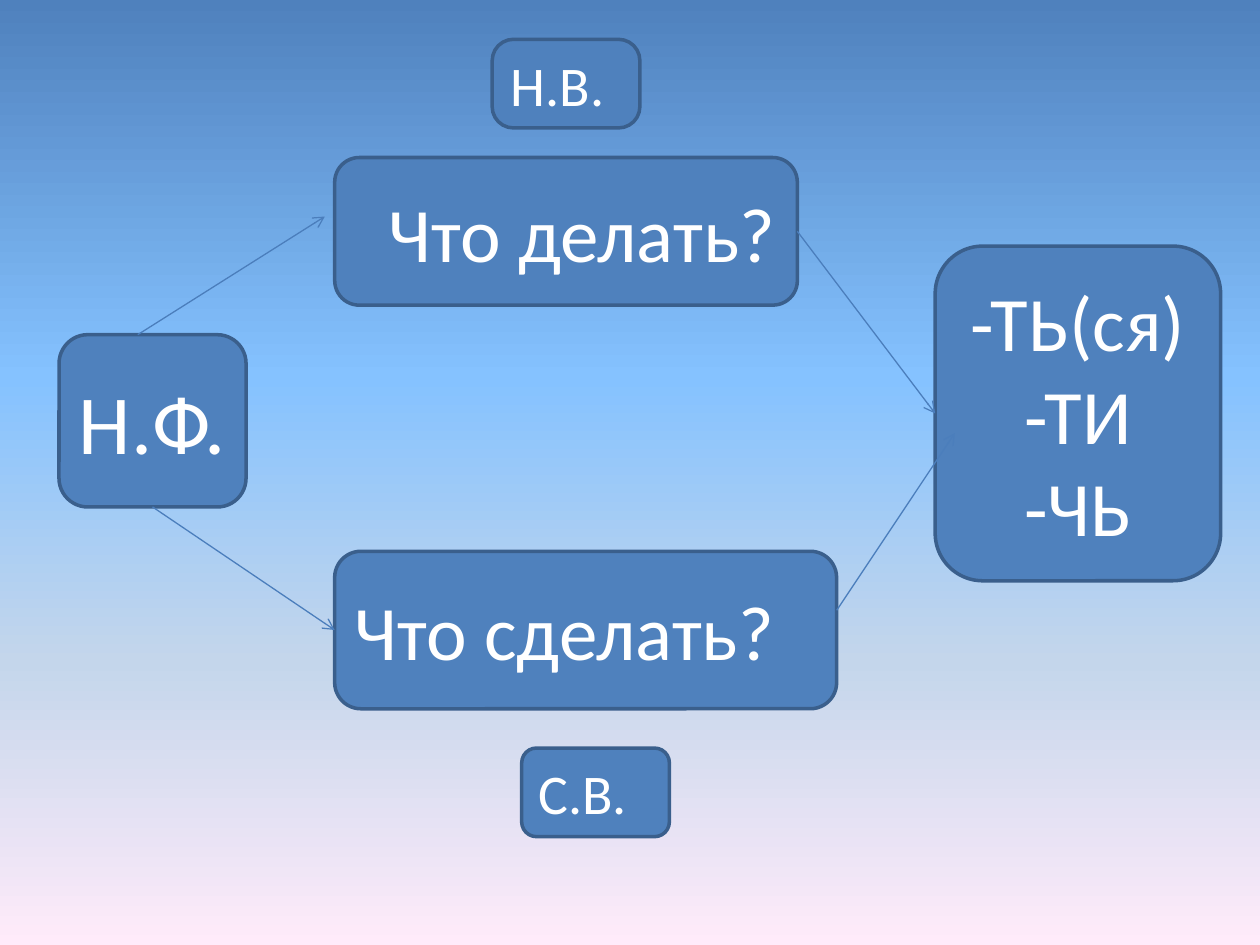
from lxml import etree
from pptx import Presentation
from pptx import util as u
from pptx.dml.color import RGBColor
from pptx.enum import shapes, text
from pptx.oxml import ns

HUES = {"fill": "4F81BD", "edge": "3A5F8C", "arrow": "4B7EBC", "text": "FFFFFF"}
SKY = {0: "4F81BD", 40: "85C2FF", 70: "C4D6EB", 100: "FFEBFA"}
COLS = 128
WIDE, HIGH = u.Inches(10), u.Inches(7.5)
FLOW = shapes.MSO_SHAPE.FLOWCHART_ALTERNATE_PROCESS
ROUND = shapes.MSO_SHAPE.ROUNDED_RECTANGLE
LEFT, MID = text.PP_ALIGN.LEFT, text.PP_ALIGN.CENTER


def grid(*cells):
    """Turn square grid cells into slide lengths."""
    return [round(WIDE * cell / COLS) for cell in cells]


def style(item, form):
    """Set every attribute named in a dict of format values."""
    for key, value in form.items():
        setattr(item, key, value)


def paint(slide):
    """Fill the slide with the vertical sky gradient."""
    fill = slide.background.fill
    fill.gradient()
    fill.gradient_angle = 270
    stops = slide.element.find(".//" + ns.qn("a:gsLst"))
    for stop in list(stops):
        stops.remove(stop)
    for share, hue in SKY.items():
        stop = etree.SubElement(stops, ns.qn("a:gs"), pos=str(share * 1000))
        etree.SubElement(stop, ns.qn("a:srgbClr"), val=hue)


def edge(line, hue, width):
    """Give a line its colour and width."""
    line.color.rgb = RGBColor.from_string(HUES[hue])
    line.width = u.Pt(width)


def box(slide, kind, area, words, size, align=LEFT, pads=(0.1, 0.1), bend=None):
    """Add a rounded box with one paragraph for each line of words."""
    shape = slide.shapes.add_shape(kind, *grid(*area))
    shape.shadow.inherit = False
    shape.fill.solid()
    shape.fill.fore_color.rgb = RGBColor.from_string(HUES["fill"])
    edge(shape.line, "edge", 2)
    if bend:
        shape.adjustments[0] = bend
    left, right = map(u.Inches, pads)
    frame = shape.text_frame
    style(frame, {"text": words, "word_wrap": True, "margin_left": left,
                  "margin_right": right, "vertical_anchor": text.MSO_ANCHOR.MIDDLE})
    for para in frame.paragraphs:
        para.alignment = align
        for run in para.runs:
            style(run.font, {"name": "Calibri", "size": u.Pt(size)})
            run.font.color.rgb = RGBColor.from_string(HUES["text"])


def arrow(slide, ends):
    """Add a thin line with an open arrowhead at its far end."""
    link = slide.shapes.add_connector(shapes.MSO_CONNECTOR.STRAIGHT, *grid(*ends))
    edge(link.line, "arrow", 0.75)
    props = link.element.spPr
    etree.SubElement(props.find(ns.qn("a:ln")), ns.qn("a:tailEnd"), type="arrow")
    etree.SubElement(props, ns.qn("a:effectLst"))


def main():
    """Build the verb form diagram and save it."""
    deck = Presentation()
    style(deck, {"slide_width": WIDE, "slide_height": HIGH})
    slide = deck.slides.add_slide(deck.slide_layouts[6])
    paint(slide)
    box(slide, FLOW, (6, 34, 19, 17.5), "Н.Ф.", 48, MID, pads=(0.02, 0.02))
    box(slide, FLOW, (34, 16, 47, 15), "Что делать?", 44, pads=(0.37, 0.1))
    box(slide, FLOW, (34, 56, 51, 16), "Что сделать?", 44)
    box(slide, FLOW, (95, 25, 29, 34), "-ТЬ(ся)\n-ТИ\n-ЧЬ", 44, MID)
    for ends in ((15.5, 51.5, 34, 64), (14, 34, 33, 22),
                 (81, 23.5, 95, 42), (85, 62, 97, 44)):
        arrow(slide, ends)
    box(slide, ROUND, (50, 4, 15, 9), "Н.В.", 32, bend=0.24)
    box(slide, ROUND, (53, 76, 15, 9), "С.В.", 32)
    deck.save("out.pptx")


if __name__ == "__main__":
    main()
